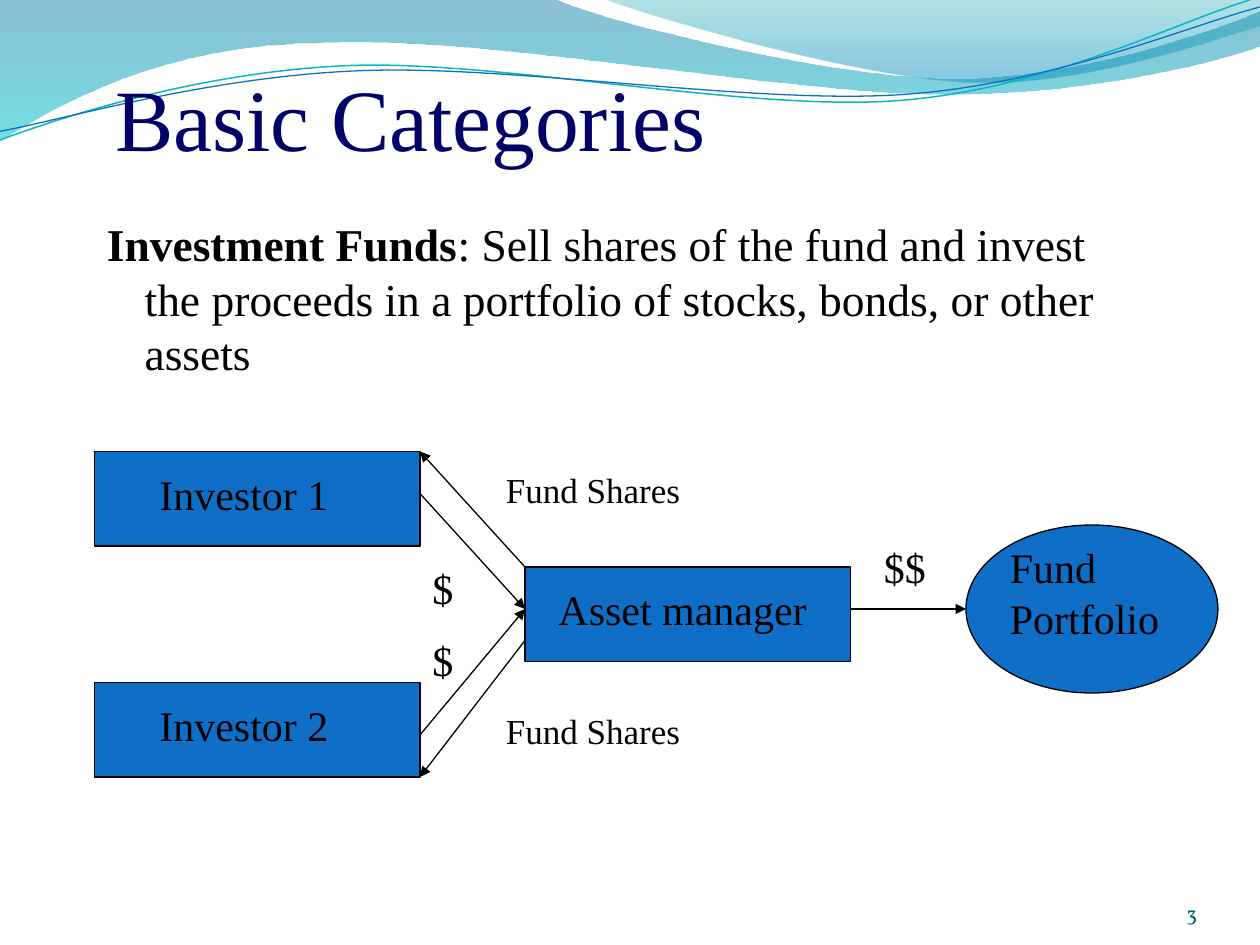
from pptx import Presentation
from pptx.dml.color import RGBColor
from pptx.enum.shapes import MSO_CONNECTOR, MSO_SHAPE
from pptx.enum.text import MSO_ANCHOR, PP_ALIGN
from pptx.oxml.ns import qn
from pptx.util import Pt
from lxml import etree

RECT, OVAL = MSO_SHAPE.RECTANGLE, MSO_SHAPE.OVAL
STRAIGHT = MSO_CONNECTOR.STRAIGHT
TOP, BOTTOM = MSO_ANCHOR.TOP, MSO_ANCHOR.BOTTOM
LEFT, RIGHT = PP_ALIGN.LEFT, PP_ALIGN.RIGHT
SERIF, NUMBER_FONT = "Times New Roman", "Vollkorn"
COLORS = {"black": "000000", "blue": "0F6FC6", "navy": "000066",
          "teal": "0AB8BF", "number": "045D75", "wave blue": "0074A1",
          "wave cyan": "00C6CF", "wave green": "00A1A9", "wave sky": "008BBF"}

# Header curves: each segment is a line (2 numbers) or a cubic curve (6)
WAVES = [  # start, segments, gradient stops (position, colour, opacity %)
    ((0, -0.7),
     [(317, -0.7), (343, 12, 478, 45, 546, 45), (614, 45, 690, 19, 720, 6.5),
      (721, 26), (708, 32, 626, 55, 537, 54), (448, 54, 275, 20, 185, 24.5),
      (93, 25, 33, 60, -0.7, 81)],
     [(0, "wave blue", 45), (1, "wave cyan", 55)]),
    ((345, -0.7),
     [(366, 8, 491, 45, 554, 47), (616, 50, 692, 23, 720, 15), (720, 0)],
     [(0, "wave green", 30), (0.8, "wave sky", 45)]),
]
STRANDS = [  # start, segments, colour, width
    ((0, 80), [(35, 67, 114, 41, 199, 37.5), (284, 34, 427, 64, 513, 57.5),
               (600, 51, 675, 11, 719, -1.5)], "teal", 0.85),
    ((0, 75), [(34, 69, 118, 44, 204, 40.5), (290, 36.5, 430, 60, 516, 54),
               (602, 48, 678, 15, 720, 4)], "blue", 0.75),
]

TITLE = "Basic Categories"
BODY = [("Investment Funds", True),
        (": Sell shares of the fund and invest the proceeds in a portfolio "
         "of stocks, bonds, or other assets", False)]

# Diagram
NODES = [  # shape, left, top, width, height
    (RECT, 54, 258, 186, 54),
    (RECT, 54, 390, 186, 54),
    (RECT, 300, 324, 186, 54),
    (OVAL, 552, 300, 144, 96),
]
ARROWS = [  # from, to
    ((240, 282), (300, 348)),
    ((240, 420), (300, 348)),
    ((486, 348), (552, 348)),
    ((300, 324), (240, 258)),
    ((300, 366), (240, 444)),
]
LABELS = [  # paragraphs, left, top, width, height, size
    (["Investor 1"], 84, 264, 126, 36, 24),
    (["Investor 2"], 84, 396, 126, 36, 24),
    (["Asset manager"], 312, 330, 162, 36, 24),
    (["Fund Portfolio"], 570, 306, 126, 65, 24),
    (["$", "$"], 240, 318, 36, 79, 24),
    (["$$"], 498, 306, 48, 36, 24),
    (["Fund Shares"], 282, 264, 126, 31, 20),
    (["Fund Shares"], 282, 402, 126, 31, 20),
]


def rgb(name):
    return RGBColor.from_string(COLORS[name])


def add_path(s, start, segments, close):
    """Freeform in hundredths of a point, with true cubic curves."""
    points = [(round(seg[i] * 100), round(seg[i + 1] * 100))
              for seg in [start, *segments] for i in range(0, len(seg), 2)]
    builder = s.shapes.build_freeform(*points[0], scale=Pt(0.01))
    builder.add_line_segments(points[1:], close=close)
    sp = builder.convert_to_shape()
    sp.shadow.inherit = False
    # Merge the three points of each curve into one cubic segment
    lines = iter(sp._element.spPr.findall(".//" + qn("a:lnTo")))
    for seg in segments:
        first = next(lines)
        if len(seg) == 6:
            first.tag = qn("a:cubicBezTo")
            for _ in range(2):
                extra = next(lines)
                first.append(extra[0])
                extra.getparent().remove(extra)
    return sp


def add_text(s, paragraphs, box, size, color="black", font=SERIF,
             anchor=TOP, align=LEFT, insets=(7.2, 3.6, 7.2, 3.6)):
    """Text box; each paragraph is a list of (text, bold) runs."""
    sp = s.shapes.add_textbox(*map(Pt, box))
    tf = sp.text_frame
    tf.word_wrap = True
    tf.vertical_anchor = anchor
    (tf.margin_left, tf.margin_top,
     tf.margin_right, tf.margin_bottom) = map(Pt, insets)
    for i, runs in enumerate(paragraphs):
        p = tf.add_paragraph() if i else tf.paragraphs[0]
        p.alignment = align
        if i:
            p.space_before = Pt(size / 2)
        for text, bold in runs:
            r = p.add_run()
            r.text = text
            r.font.size, r.font.name, r.font.bold = Pt(size), font, bold
            r.font.color.rgb = rgb(color)
    return sp


def add_arrow(s, start, end):
    line = s.shapes.add_connector(STRAIGHT, *map(Pt, start + end))
    line.line.color.rgb = rgb("black")
    line.line.width = Pt(0.75)
    ln = line._element.spPr.find(qn("a:ln"))
    etree.SubElement(ln, qn("a:tailEnd"), type="triangle")
    etree.SubElement(line._element.spPr, qn("a:effectLst"))


prs = Presentation()
prs.slide_width, prs.slide_height = Pt(720), Pt(540)
s = prs.slides.add_slide(prs.slide_layouts[6])

# Header waves and strands
for start, segments, stops in WAVES:
    sp = add_path(s, start, segments, True)
    sp.line.fill.background()
    sp.fill.gradient()
    sp.fill.gradient_angle = 270
    for stop, (position, color, _) in zip(sp.fill.gradient_stops, stops):
        stop.position = position
        stop.color.rgb = rgb(color)
    clrs = sp._element.spPr.findall(".//" + qn("a:srgbClr"))
    for clr, (_, _, opacity) in zip(clrs, stops):
        etree.SubElement(clr, qn("a:alpha"), val=str(opacity * 1000))
for start, segments, color, width in STRANDS:
    sp = add_path(s, start, segments, False)
    sp.fill.background()
    sp.line.color.rgb = rgb(color)
    sp.line.width = Pt(width)

# Title and body
add_text(s, [[(TITLE, False)]], (66, 24, 612, 72.5), 50, "navy",
         anchor=BOTTOM, insets=(0, 3.6, 0, 0))
body = add_text(s, [BODY], (54, 120, 612, 132), 26)
pPr = body.text_frame.paragraphs[0]._p.get_or_add_pPr()
pPr.set("marL", str(Pt(21.6)))
pPr.set("indent", str(Pt(-21.6)))

# Diagram
for kind, *box in NODES:
    sp = s.shapes.add_shape(kind, *map(Pt, box))
    sp.shadow.inherit = False
    sp.fill.solid()
    sp.fill.fore_color.rgb = rgb("blue")
    sp.line.color.rgb = rgb("black")
    sp.line.width = Pt(0.75)
for start, end in ARROWS:
    add_arrow(s, start, end)
for paragraphs, *box, size in LABELS:
    add_text(s, [[(text, False)] for text in paragraphs], box, size)

# Slide number
add_text(s, [[("3", False)]], (624, 500, 60, 29), 12, "number", NUMBER_FONT,
         anchor=BOTTOM, align=RIGHT, insets=(0, 0, 0, 0))

prs.save("out.pptx")
